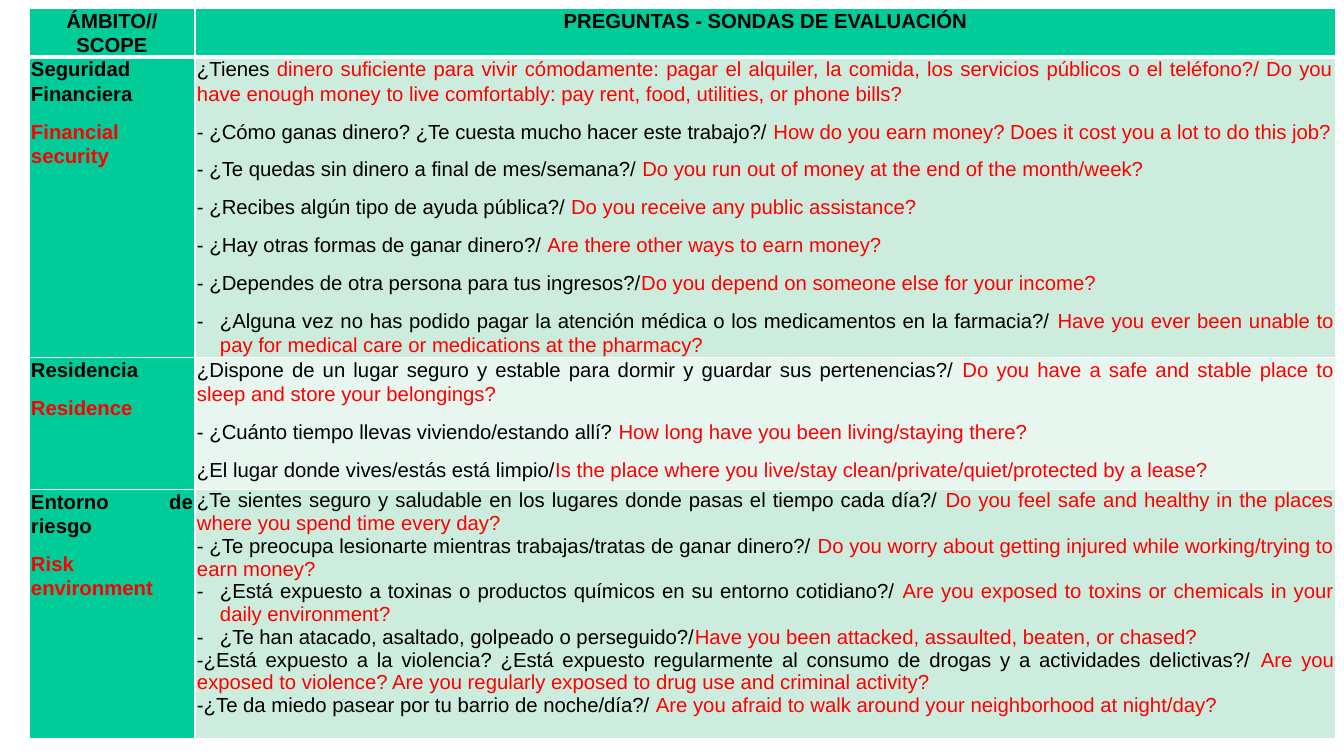
from lxml.etree import SubElement
from pptx import Presentation
from pptx.dml.color import RGBColor
from pptx.enum.text import MSO_ANCHOR, PP_ALIGN as Align
from pptx.oxml.ns import qn
from pptx.util import Emu, Pt

BLACK, RED, WHITE = "000000", "FF0000", "FFFFFF"
GREEN, MINT, PALE = "00CC99", "CCECDE", "E7F6EF"
HEADINGS = ["ÁMBITO// SCOPE", "PREGUNTAS - SONDAS DE EVALUACIÓN"]
SCOPES = [
    {"name": ("Seguridad Financiera", "Financial security"), "fill": MINT, "loose": True, "questions": [
        ("¿Tienes ", "dinero suficiente para vivir cómodamente: pagar el alquiler, la comida, los servicios "
         "públicos o el teléfono?/ Do you have enough money to live comfortably: pay rent, food, utilities, "
         "or phone bills?"),
        ("- ¿Cómo ganas dinero? ¿Te cuesta mucho hacer este trabajo?/ ",
         "How do you earn money? Does it cost you a lot to do this job?"),
        ("- ¿Te quedas sin dinero a final de mes/semana?/ ",
         "Do you run out of money at the end of the month/week?"),
        ("- ¿Recibes algún tipo de ayuda pública?/ ", "Do you receive any public assistance?"),
        ("- ¿Hay otras formas de ganar dinero?/ ", "Are there other ways to earn money?"),
        ("- ¿Dependes de otra persona para tus ingresos?/", "Do you depend on someone else for your income?"),
        ("¿Alguna vez no has podido pagar la atención médica o los medicamentos en la farmacia?/ ",
         "Have you ever been unable to pay for medical care or medications at the pharmacy?", "-"),
    ]},
    {"name": ("Residencia", "Residence"), "fill": PALE, "loose": True, "questions": [
        ("¿Dispone de un lugar seguro y estable para dormir y guardar sus pertenencias?/ ",
         "Do you have a safe and stable place to sleep and store your belongings?"),
        ("- ¿Cuánto tiempo llevas viviendo/estando allí? ", "How long have you been living/staying there?"),
        ("¿El lugar donde vives/estás está limpio/",
         "Is the place where you live/stay clean/private/quiet/protected by a lease?"),
    ]},
    {"name": ("Entorno de riesgo", "Risk environment"), "fill": MINT, "loose": False, "questions": [
        ("¿Te sientes seguro y saludable en los lugares donde pasas el tiempo cada día?/ ",
         "Do you feel safe and healthy in the places where you spend time every day?"),
        ("- ¿Te preocupa lesionarte mientras trabajas/tratas de ganar dinero?/ ",
         "Do you worry about getting injured while working/trying to earn money?"),
        ("¿Está expuesto a toxinas o productos químicos en su entorno cotidiano?/ ",
         "Are you exposed to toxins or chemicals in your daily environment?", "-"),
        ("¿Te han atacado, asaltado, golpeado o perseguido?/",
         "Have you been attacked, assaulted, beaten, or chased?", "-"),
        ("-¿Está expuesto a la violencia? ¿Está expuesto regularmente al consumo de drogas y a actividades "
         "delictivas?/ ",
         "Are you exposed to violence? Are you regularly exposed to drug use and criminal activity?"),
        ("-¿Te da miedo pasear por tu barrio de noche/día?/ ",
         "Are you afraid to walk around your neighborhood at night/day?"),
    ]},
]
SLIDE_SIZE = 1344, 756
LEFT, TOP = 29, 8
COLUMN_WIDTHS = [166, 1141]
ROW_HEIGHTS = [47, 300, 132, 249]
INDENT = 23
CELL_FORMAT = {"margin_left": 2, "margin_right": 2, "margin_top": 0, "margin_bottom": 0}
LOOSE = {"line_spacing": 1.07, "space_after": Pt(8)}
TIGHT = {"line_spacing": 1.0, "space_after": Pt(0)}


def px(length):
    return Emu(round(length * 914400 / 122))


def color(value):
    return RGBColor.from_string(value)


def apply(target, values):
    for name, value in values.items():
        setattr(target, name, value)


def add_borders(cell, widths):
    properties = cell._tc.get_or_add_tcPr()
    for side, width in widths.items():
        line = SubElement(properties, qn(f"a:ln{side}"), w=str(Pt(width)))
        SubElement(SubElement(line, qn("a:solidFill")), qn("a:srgbClr"), val=WHITE)


def add_bullet(paragraph, mark):
    properties = paragraph._p.get_or_add_pPr()
    properties.set("marL", str(px(INDENT)))
    properties.set("indent", str(-px(INDENT)))
    SubElement(properties, qn("a:buFont"), typeface="Arial")
    SubElement(properties, qn("a:buChar"), char=mark)


def fill_cell(row, column, fill, paragraphs, align, bold, spacing):
    cell = table.cell(row, column)
    apply(cell, {name: px(margin) for name, margin in CELL_FORMAT.items()})
    cell.vertical_anchor = MSO_ANCHOR.TOP
    add_borders(cell, {"L": 1, "R": 1, "T": 3 if row == 1 else 1, "B": 3 if row == 0 else 1})
    cell.fill.solid()
    cell.fill.fore_color.rgb = color(fill)
    frame = cell.text_frame
    for number, (runs, mark) in enumerate(paragraphs):
        paragraph = frame.add_paragraph() if number else frame.paragraphs[0]
        apply(paragraph, {"alignment": align, **spacing})
        if mark:
            add_bullet(paragraph, mark)
        for text, text_color in runs:
            run = paragraph.add_run()
            run.text = text
            apply(run.font, {"name": "Arial", "size": Pt(12), "bold": bold})
            run.font.color.rgb = color(text_color)


deck = Presentation()
deck.slide_width, deck.slide_height = map(px, SLIDE_SIZE)
slide = deck.slides.add_slide(deck.slide_layouts[6])
table = slide.shapes.add_table(len(ROW_HEIGHTS), len(COLUMN_WIDTHS), px(LEFT), px(TOP),
                               px(sum(COLUMN_WIDTHS)), px(sum(ROW_HEIGHTS))).table
apply(table, {"first_row": False, "horz_banding": False})
for table_column, width in zip(table.columns, COLUMN_WIDTHS):
    table_column.width = px(width)
for table_row, height in zip(table.rows, ROW_HEIGHTS):
    table_row.height = px(height)

for column, heading in enumerate(HEADINGS):
    fill_cell(0, column, GREEN, [([(heading, BLACK)], None)], Align.CENTER, True, LOOSE)
for row, scope in enumerate(SCOPES, 1):
    names = [([(name, shade)], None) for name, shade in zip(scope["name"], (BLACK, RED))]
    questions = [([(spanish, BLACK), (english, RED)], mark[0] if mark else None)
                 for spanish, english, *mark in scope["questions"]]
    fill_cell(row, 0, GREEN, names, Align.JUSTIFY, True, LOOSE)
    fill_cell(row, 1, scope["fill"], questions, Align.JUSTIFY, False, LOOSE if scope["loose"] else TIGHT)

deck.save("out.pptx")
